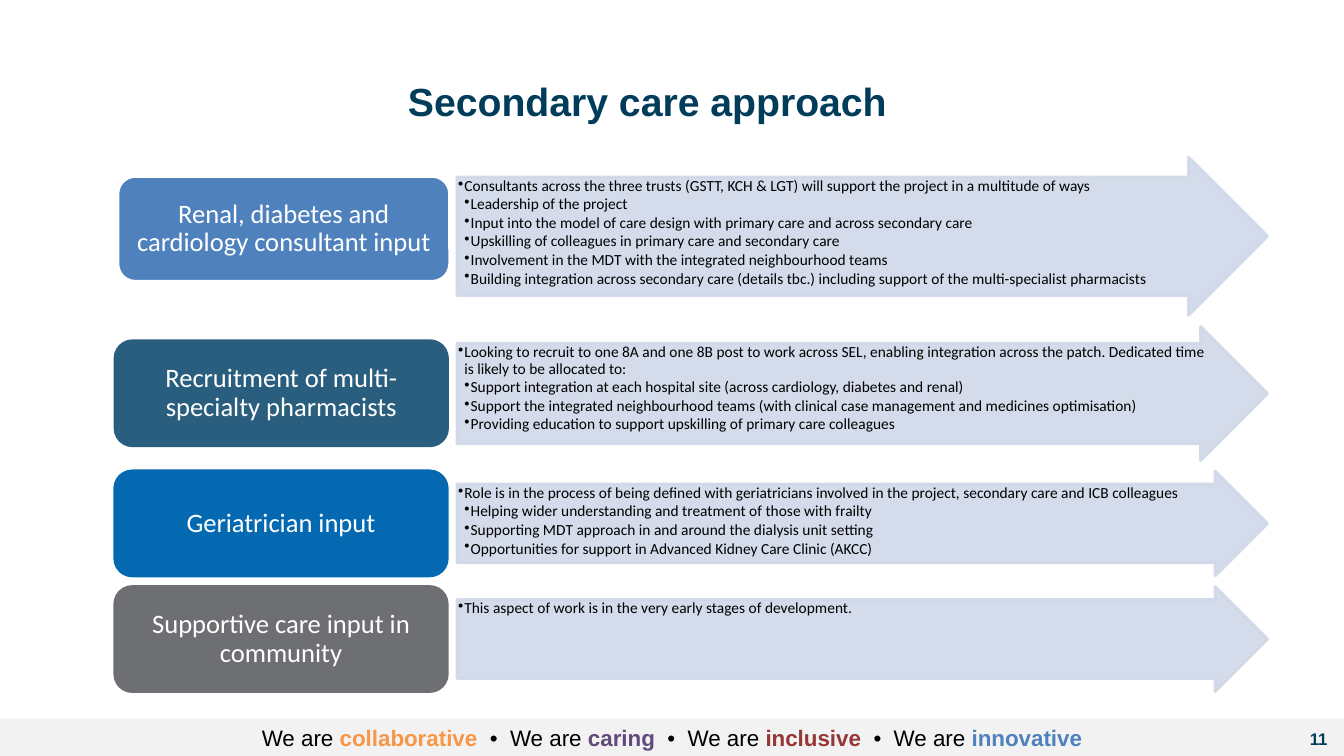
from lxml.etree import SubElement
from pptx import Presentation
from pptx.dml.color import RGBColor
from pptx.enum.shapes import MSO_SHAPE
from pptx.enum.text import MSO_ANCHOR, PP_ALIGN
from pptx.oxml.ns import qn
from pptx.util import Pt

COLOURS = {
    "navy": "013C5B", "black": "000000", "white": "FFFFFF", "band": "F2F2F2",
    "arrow": "D0D8E8", "blue": "4F81BD", "teal": "295E7E", "royal": "0469B1",
    "grey": "6E6F73", "orange": "F79646", "purple": "604A7B", "red": "953735",
}
ARROW_LEFT = 326.5
ARROW_RIGHT = 905.5
LABEL_HEIGHT = 75
INDENT = 4.5

ROWS = [
    {"label": "Renal, diabetes and cardiology consultant input",
     "fill": "blue", "line": "white", "label_box": (84.2, 126, 237),
     "arrow_top": 112.3, "arrow_height": 113,
     "points": [
         "Consultants across the three trusts (GSTT, KCH & LGT) will support the project in a multitude of ways",
         "Leadership of the project",
         "Input into the model of care design with primary care and across secondary care",
         "Upskilling of colleagues in primary care and secondary care",
         "Involvement in the MDT with the integrated neighbourhood teams",
         "Building integration across secondary care (details tbc.) including support of the "
         "multi-specialist pharmacists"]},
    {"label": "Recruitment of multi-specialty pharmacists",
     "fill": "teal", "line": "teal", "label_box": (82.2, 243.4, 237.5),
     "arrow_top": 233.2, "arrow_height": 95.8,
     "points": [
         "Looking to recruit to one 8A and one 8B post to work across SEL, enabling integration across "
         "the patch. Dedicated time is likely to be allocated to:",
         "Support integration at each hospital site (across cardiology, diabetes and renal)",
         "Support the integrated neighbourhood teams (with clinical case management and medicines optimisation)",
         "Providing education to support upskilling of primary care colleagues"]},
    {"label": "Geriatrician input",
     "fill": "royal", "line": "royal", "label_box": (82, 336.4, 237.5),
     "arrow_top": 336.4, "arrow_height": 75,
     "points": [
         "Role is in the process of being defined with geriatricians involved in the project, "
         "secondary care and ICB colleagues",
         "Helping wider understanding and treatment of those with frailty",
         "Supporting MDT approach in and around the dialysis unit setting",
         "Opportunities for support in Advanced Kidney Care Clinic (AKCC)"]},
    {"label": "Supportive care input in community",
     "fill": "grey", "line": "grey", "label_box": (82, 419, 237.5),
     "arrow_top": 419, "arrow_height": 75,
     "points": ["This aspect of work is in the very early stages of development."]},
]
VALUES = [("collaborative", "orange"), ("caring", "purple"),
          ("inclusive", "red"), ("innovative", "blue")]


def rgb(name):
    return RGBColor.from_string(COLOURS[name])


def write_text(paragraph, text, size, colour="black", font="Arial", bold=False,
               align=PP_ALIGN.CENTER, line_spacing=None):
    run = paragraph.add_run()
    run.text = text
    run.font.size = Pt(size)
    run.font.name = font
    run.font.bold = bold
    run.font.color.rgb = rgb(colour)
    paragraph.alignment = align
    if line_spacing:
        paragraph.line_spacing = line_spacing


def set_frame(frame, anchor, side=7.2, edge=3.6):
    frame.word_wrap = True
    frame.vertical_anchor = anchor
    frame.margin_left = frame.margin_right = Pt(side)
    frame.margin_top = frame.margin_bottom = Pt(edge)
    return frame.paragraphs[0]


def add_block(slide, kind, box, fill, line=None):
    block = slide.shapes.add_shape(kind, *map(Pt, box))
    block.shadow.inherit = False
    block.fill.solid()
    block.fill.fore_color.rgb = rgb(fill)
    if line:
        block.line.color.rgb = rgb(line)
        block.line.width = Pt(2)
    else:
        block.line.fill.background()
    return block


def add_heading(slide, text, box, anchor=MSO_ANCHOR.MIDDLE, **text_format):
    heading = slide.shapes.add_textbox(*map(Pt, box))
    write_text(set_frame(heading.text_frame, anchor), text, **text_format)


def bullet(paragraph, depth):
    paragraph.level = depth
    properties = paragraph._p.get_or_add_pPr()
    properties.set("marL", str(Pt(INDENT * depth)))
    properties.set("indent", str(-Pt(INDENT)))
    SubElement(properties, qn("a:buChar")).set("char", "•")
    paragraph.space_after = Pt(1.4)


def add_arrow(slide, top, height, points):
    box = (ARROW_LEFT, top, ARROW_RIGHT - ARROW_LEFT, height)
    arrow = add_block(slide, MSO_SHAPE.RIGHT_ARROW, box, "arrow", "arrow")
    arrow.adjustments[0] = 0.75
    for colour in arrow._element.spPr.iter(qn("a:srgbClr")):
        SubElement(colour, qn("a:alpha")).set("val", "90000")
    paragraph = set_frame(arrow.text_frame, MSO_ANCHOR.TOP, 0.7, 0.7)
    for index, point in enumerate(points):
        if index:
            paragraph = arrow.text_frame.add_paragraph()
        bullet(paragraph, 2 if index else 1)
        write_text(paragraph, point, 11, font="Calibri",
                   align=PP_ALIGN.LEFT, line_spacing=0.9)


def add_label(slide, text, box, fill, line):
    left, top, width = box
    label = add_block(slide, MSO_SHAPE.ROUNDED_RECTANGLE,
                      (left, top, width, LABEL_HEIGHT), fill, line)
    paragraph = set_frame(label.text_frame, MSO_ANCHOR.MIDDLE, 5.7, 2.85)
    write_text(paragraph, text, 19, "white", "Calibri", line_spacing=0.9)


def add_values_band(slide):
    band = add_block(slide, MSO_SHAPE.RECTANGLE, (0, 513.4, 960, 26.6), "band")
    paragraph = set_frame(band.text_frame, MSO_ANCHOR.TOP)
    for index, (value, colour) in enumerate(VALUES):
        write_text(paragraph, "  •  We are " if index else "We are ", 16)
        write_text(paragraph, value, 16, colour, bold=True)


def main():
    deck = Presentation()
    deck.slide_width, deck.slide_height = Pt(960), Pt(540)
    slide = deck.slides.add_slide(deck.slide_layouts[6])
    add_values_band(slide)
    add_heading(slide, "Secondary care approach ", (170, 46, 592.5, 52),
                size=28, colour="navy", bold=True)
    for row in ROWS:
        add_arrow(slide, row["arrow_top"], row["arrow_height"], row["points"])
        add_label(slide, row["label"], row["label_box"], row["fill"], row["line"])
    add_heading(slide, "11", (822.2, 513.4, 133.2, 28.8), size=12,
                colour="navy", bold=True, align=PP_ALIGN.RIGHT)
    deck.save("out.pptx")


if __name__ == "__main__":
    main()
